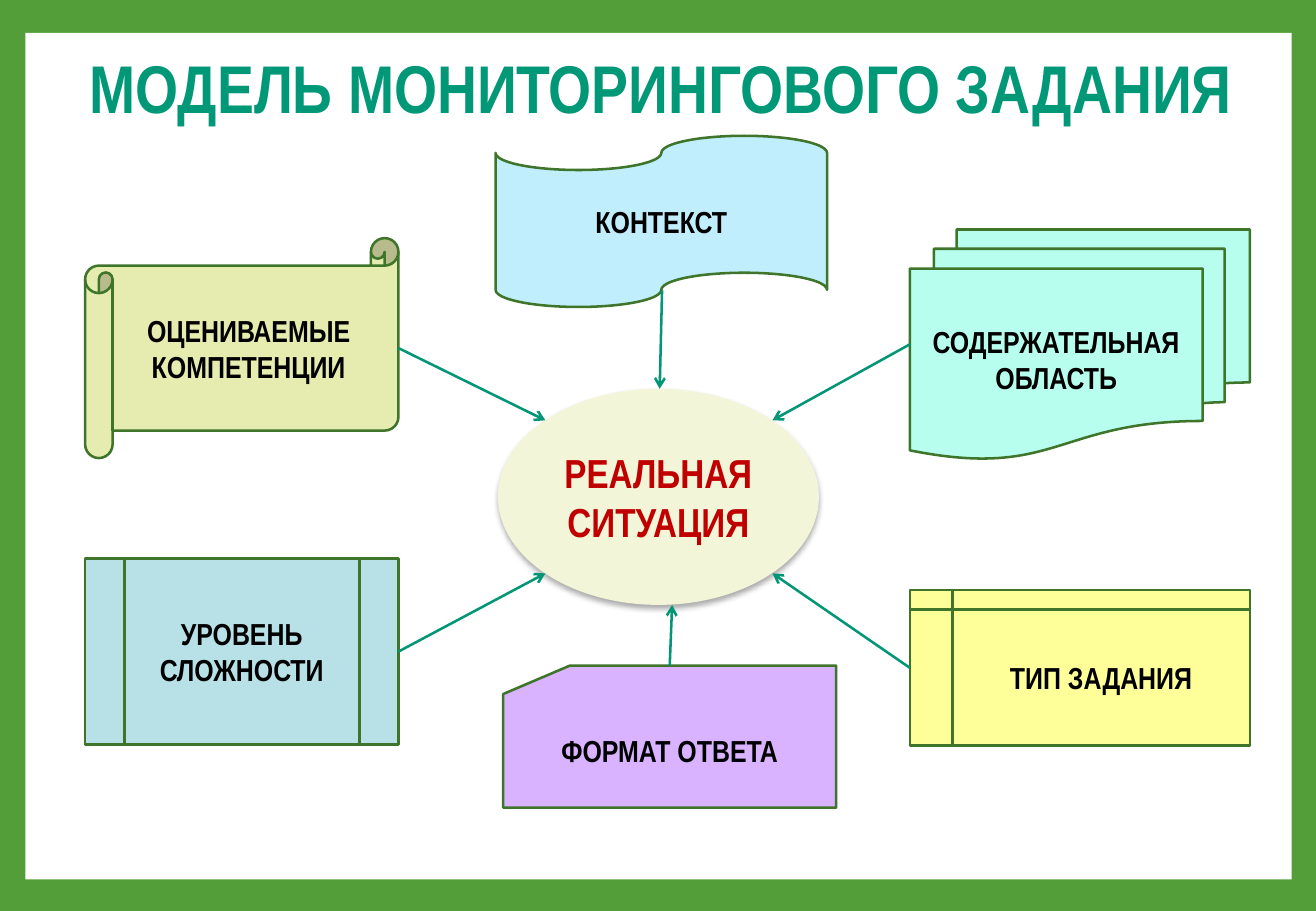
from lxml.etree import SubElement
from pptx import Presentation
from pptx.dml.color import RGBColor
from pptx.enum.shapes import MSO_CONNECTOR, MSO_SHAPE
from pptx.enum.text import MSO_ANCHOR, MSO_AUTO_SIZE, PP_ALIGN
from pptx.oxml.ns import qn
from pptx.util import Cm, Pt


def paint(target, color):
    target.solid()
    target.fore_color.rgb = RGBColor.from_string(color)


def write(shape, text, size, color):
    frame = shape.text_frame
    frame.margin_left = frame.margin_right = Cm(0.33)
    frame.margin_top = frame.margin_bottom = Cm(0.18)
    frame.text = text
    for para in frame.paragraphs:
        para.alignment = PP_ALIGN.CENTER
        para.font.name = "Arial Narrow"
        para.font.size = Pt(size)
        para.font.bold = True
        paint(para.font.fill, color)


deck = Presentation()
deck.slide_width, deck.slide_height = Cm(27.51), Cm(19.05)
page = deck.slides.add_slide(deck.slide_layouts[6])

# Green frame around a white panel
paint(page.background.fill, "549E39")
panel = page.shapes.add_shape(MSO_SHAPE.RECTANGLE, Cm(0.53), Cm(0.69), Cm(26.47), Cm(17.7))
panel.shadow.inherit = False
paint(panel.fill, "FFFFFF")
panel.line.fill.background()

# Central situation with a soft shadow
situation = page.shapes.add_shape(MSO_SHAPE.OVAL, Cm(10.41), Cm(8.13), Cm(6.71), Cm(4.52))
situation.shadow.inherit = False
paint(situation.fill, "F2F5D8")
situation.line.fill.background()
situation.text_frame.vertical_anchor = MSO_ANCHOR.MIDDLE
write(situation, "РЕАЛЬНАЯ СИТУАЦИЯ", 24, "C00000")
effects = situation._element.spPr.find(qn("a:effectLst"))
shadow = SubElement(effects, qn("a:outerShdw"), blurRad="44450", dist="27940",
                    dir="5400000", rotWithShape="0")
shadow_color = SubElement(shadow, qn("a:srgbClr"), val="000000")
SubElement(shadow_color, qn("a:alpha"), val="32000")

# Components: shape, text, fill, (left, top, width, height),
# arrow start, arrow end, connection site
# The wavy lower edge of the tape has no site at its frame, so its arrow is free
components = [
    (MSO_SHAPE.FLOWCHART_PUNCHED_TAPE, "КОНТЕКСТ", "C1EEFC",
     (10.36, 2.84, 6.93, 3.58), (13.84, 6.07), (13.79, 8.13), None),
    (MSO_SHAPE.HORIZONTAL_SCROLL, "ОЦЕНИВАЕМЫЕ КОМПЕТЕНЦИИ", "E6ECB0",
     (1.78, 4.98, 6.55, 4.6), (8.33, 7.28), (11.4, 8.79), 3),
    (MSO_SHAPE.FLOWCHART_PREDEFINED_PROCESS, "УРОВЕНЬ СЛОЖНОСТИ", "B7E1E7",
     (1.78, 11.68, 6.55, 3.89), (8.33, 13.63), (11.4, 11.99), 3),
    (MSO_SHAPE.FLOWCHART_CARD, "ФОРМАТ ОТВЕТА", "D9B3FF",
     (10.52, 13.92, 6.96, 2.97), (14, 13.92), (14.05, 12.65), 0),
    (MSO_SHAPE.FLOWCHART_MULTIDOCUMENT, "СОДЕРЖАТЕЛЬНАЯ\nОБЛАСТЬ", "B8FEEF",
     (19.02, 4.8, 7.11, 4.8), (19.02, 7.2), (16.15, 8.79), 1),
    (MSO_SHAPE.FLOWCHART_INTERNAL_STORAGE, "ТИП ЗАДАНИЯ", "FFFF99",
     (19.02, 12.34, 7.11, 3.25), (19.02, 13.97), (16.15, 11.99), 1),
]
for kind, text, color, area, start, end, site in components:
    card = page.shapes.add_shape(kind, *map(Cm, area))
    card.shadow.inherit = False
    paint(card.fill, color)
    paint(card.line.fill, "3E752A")
    card.line.width = Pt(1.5)
    card.text_frame.vertical_anchor = MSO_ANCHOR.MIDDLE
    write(card, text, 18, "000000")

    # Arrow to the situation
    arrow = page.shapes.add_connector(MSO_CONNECTOR.STRAIGHT, *map(Cm, start + end))
    if site is not None:
        arrow.begin_connect(card, site)
    paint(arrow.line.fill, "029676")
    arrow.line.width = Pt(1.5)
    SubElement(arrow.line._get_or_add_ln(), qn("a:tailEnd"), type="arrow")
    SubElement(arrow._element.spPr, qn("a:effectLst"))

# Title
title = page.shapes.add_textbox(Cm(1.37), Cm(0.79), Cm(24.89), Cm(2.06))
title.text_frame.word_wrap = False
title.text_frame.auto_size = MSO_AUTO_SIZE.SHAPE_TO_FIT_TEXT
write(title, "МОДЕЛЬ МОНИТОРИНГОВОГО ЗАДАНИЯ", 40, "009877")

deck.save("out.pptx")
